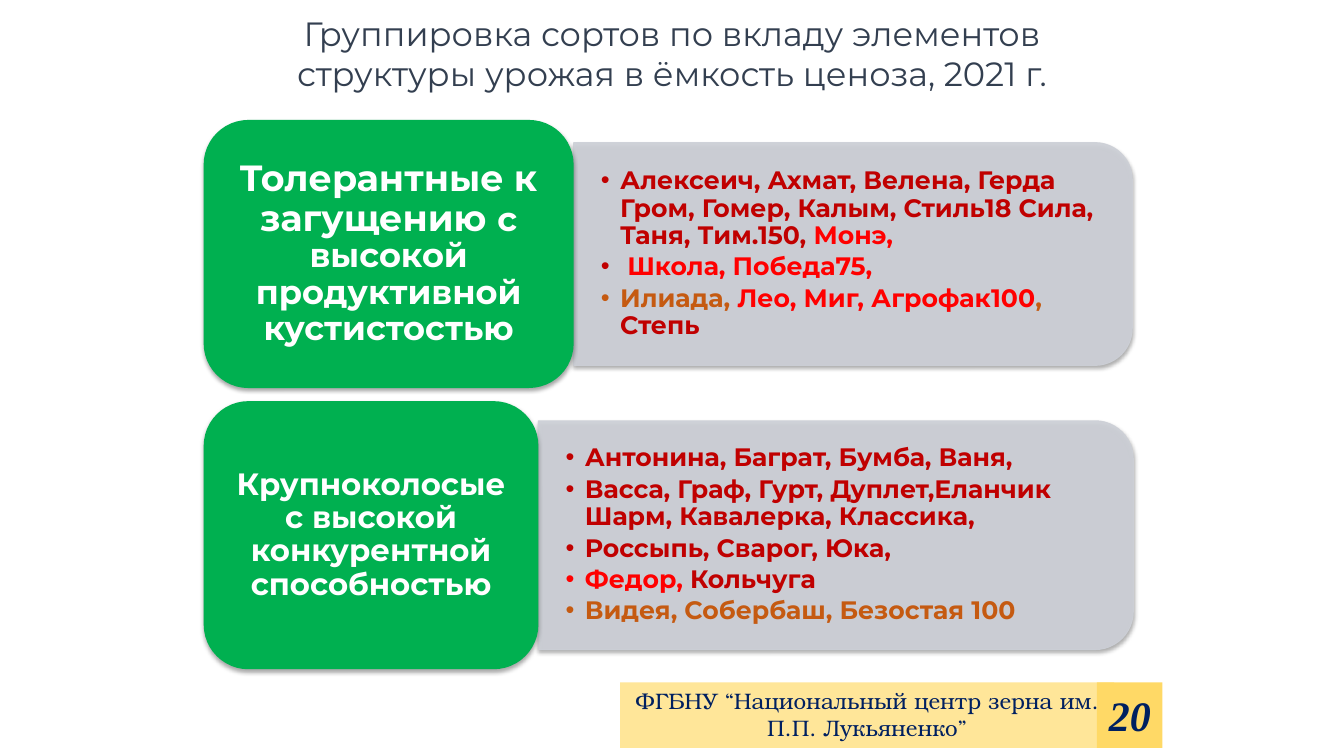
from dataclasses import dataclass

import pptx
import pptx.dml.color
import pptx.enum.shapes
import pptx.enum.text
import pptx.oxml
import pptx.oxml.ns
import pptx.util
from lxml import etree

Inches, Pt = pptx.util.Inches, pptx.util.Pt
SHAPE = pptx.enum.shapes.MSO_SHAPE
ALIGN = pptx.enum.text.PP_ALIGN
ANCHOR = pptx.enum.text.MSO_ANCHOR
qn = pptx.oxml.ns.qn


@dataclass(frozen=True)
class Theme:
    sans: str = "Montserrat"
    serif: str = "TeX Gyre Bonum"
    digits: str = "Times New Roman"
    heading: str = "333F50"
    white: str = "FFFFFF"
    green: str = "00B050"
    panel: str = "CDD0D7"
    dark_red: str = "C00000"
    red: str = "FF0000"
    orange: str = "C55A11"
    navy: str = "002060"
    pale_yellow: str = "FFE699"
    yellow: str = "FFD966"
    title_size: int = 24
    list_size: int = 18
    footer_size: int = 16
    number_size: int = 30


T = Theme()

TOLERANT = [
    [("Алексеич, Ахмат, Велена, Герда Гром, Гомер, Калым, Стиль18 Сила, Таня, Тим.150, ", T.dark_red),
     ("Монэ,", T.red)],
    [(" ", T.dark_red), ("Школа, Победа75,", T.red)],
    [("Илиада, ", T.orange), ("Лео, Миг, Агрофак100", T.red), (", ", T.orange), ("Степь", T.dark_red)],
]
LARGE_EARED = [
    [("Антонина, Баграт, Бумба, Ваня,", T.dark_red)],
    [("Васса, Граф, Гурт, Дуплет,Еланчик Шарм, Кавалерка, Классика,", T.dark_red)],
    [("Россыпь, Сварог, Юка,", T.dark_red)],
    [("Федор, ", T.red), ("Кольчуга", T.dark_red)],
    [("Видея, Собербаш, Безостая 100", T.orange)],
]


def rgb(color):
    return pptx.dml.color.RGBColor.from_string(color)


def add_run(p, text, size, color, font=T.sans, bold=False, italic=False):
    r = p.add_run()
    r.text = text
    r.font.name, r.font.size = font, Pt(size)
    r.font.bold, r.font.italic = bold, italic
    r.font.color.rgb = rgb(color)


def place(sp, x, y, w, h):
    sp.left, sp.top, sp.width, sp.height = (Inches(v) for v in (x, y, w, h))


def set_frame(tf, anchor=ANCHOR.MIDDLE, dx=0.1, dy=0.05):
    tf.word_wrap = True
    tf.auto_size = pptx.enum.text.MSO_AUTO_SIZE.NONE
    tf.vertical_anchor = anchor
    tf.margin_left = tf.margin_right = Inches(dx)
    tf.margin_top = tf.margin_bottom = Inches(dy)


def add_block(s, kind, x, y, w, h, fill):
    sp = s.shapes.add_shape(kind, *(Inches(v) for v in (x, y, w, h)))
    sp.shadow.inherit = False
    sp.fill.solid()
    sp.fill.fore_color.rgb = rgb(fill)
    sp.line.fill.background()
    return sp


def add_shadow(sp):
    effects = sp.element.spPr.find(qn("a:effectLst"))
    shadow = etree.SubElement(effects, qn("a:outerShdw"), blurRad=str(Pt(3.1)),
                              dist=str(Pt(1.8)), dir="5400000", rotWithShape="0")
    black = etree.SubElement(shadow, qn("a:srgbClr"), val="000000")
    etree.SubElement(black, qn("a:alpha"), val="35000")


def add_bullet(p):
    pPr = p._p.get_or_add_pPr()
    pPr.set("marL", str(Inches(0.19)))
    pPr.set("indent", str(-Inches(0.19)))
    etree.SubElement(pPr, qn("a:buFont"), typeface="Arial")
    etree.SubElement(pPr, qn("a:buChar"), char="•")


def add_title(s, text, x, y, w, h):
    sp = s.shapes.title
    place(sp, x, y, w, h)
    set_frame(sp.text_frame)
    p = sp.text_frame.paragraphs[0]
    p.alignment = ALIGN.CENTER
    add_run(p, text, T.title_size, T.heading)


def add_panel(s, x, y, w, h):
    """Grey panel rounded on its right side: a top-rounded shape turned by 90 degrees."""
    sp = add_block(s, SHAPE.ROUND_2_SAME_RECTANGLE,
                   x + (w - h) / 2, y + (h - w) / 2, h, w, T.panel)
    sp.rotation = 90
    sp.line.color.rgb = rgb(T.panel)
    sp.line.width = Pt(0.75)
    for color in sp.element.spPr.iter(qn("a:srgbClr")):
        etree.SubElement(color, qn("a:alpha"), val="90000")
    add_shadow(sp)
    return sp


def add_list(body, items, x, y, w, h):
    place(body, x, y, w, h)
    tf = body.text_frame
    set_frame(tf, dx=0.27, dy=0.14)
    for i, item in enumerate(items):
        p = tf.add_paragraph() if i else tf.paragraphs[0]
        p.alignment = ALIGN.LEFT
        p.line_spacing = 0.9
        p.space_before, p.space_after = Pt(0), Pt(3)
        add_bullet(p)
        for text, color in item:
            add_run(p, text, T.list_size, color, bold=True)


def add_group(s, body, label, items, x, y, w, h, label_w, panel_h):
    """Green label on the left and its list of varieties on a grey panel."""
    panel_box = x + label_w, y + (h - panel_h) / 2, w - label_w, panel_h
    panel = add_panel(s, *panel_box)
    px, py, pw, ph = panel_box
    add_list(body, items, px, py + 0.11, pw - 0.11, ph - 0.22)
    panel.element.addnext(body.element)

    sp = add_block(s, SHAPE.ROUNDED_RECTANGLE, x, y, label_w, h, T.green)
    add_shadow(sp)
    set_frame(sp.text_frame)
    p = sp.text_frame.paragraphs[0]
    p.alignment = ALIGN.CENTER
    p.line_spacing = 0.9
    for text, size in label:
        add_run(p, text, size, T.white, bold=True)


def add_footer(s, text, number, x, y, w, h):
    bar = add_block(s, SHAPE.RECTANGLE, x, y, w - h + 0.17, h, T.pale_yellow)
    set_frame(bar.text_frame, ANCHOR.TOP)
    p = bar.text_frame.paragraphs[0]
    p.alignment = ALIGN.CENTER
    add_run(p, text, T.footer_size, T.navy, T.serif)

    box = add_block(s, SHAPE.RECTANGLE, x + w - h, y, h, h, T.yellow)
    set_frame(box.text_frame)
    p = box.text_frame.paragraphs[0]
    p.alignment = ALIGN.CENTER
    add_run(p, number, T.number_size, T.navy, T.digits, bold=True, italic=True)


def main():
    prs = pptx.Presentation()
    prs.slide_width, prs.slide_height = Inches(13.33), Inches(7.5)
    s = prs.slides.add_slide(prs.slide_layouts.get_by_name("Two Content"))
    first, second = s.placeholders[1], s.placeholders[2]

    add_footer(s, "ФГБНУ “Национальный центр зерна им. П.П. Лукьяненко”", "20",
               6.15, 6.77, 5.38, 0.65)
    add_title(s, "Группировка сортов по вкладу элементов структуры урожая в ёмкость ценоза, 2021 г.",
              2.02, 0, 9.29, 1.05)
    add_group(s, first,
              [("Толерантные к загущению ", 26), ("с высокой продуктивной кустистостью", 24)],
              TOLERANT, 2.02, 1.19, 9.21, 2.66, label_w=3.67, panel_h=2.21)
    add_group(s, second, [("Крупноколосые с высокой конкурентной способностью", 22)],
              LARGE_EARED, 2.02, 3.98, 9.22, 2.66, label_w=3.32, panel_h=2.27)
    prs.save("out.pptx")


if __name__ == "__main__":
    main()
